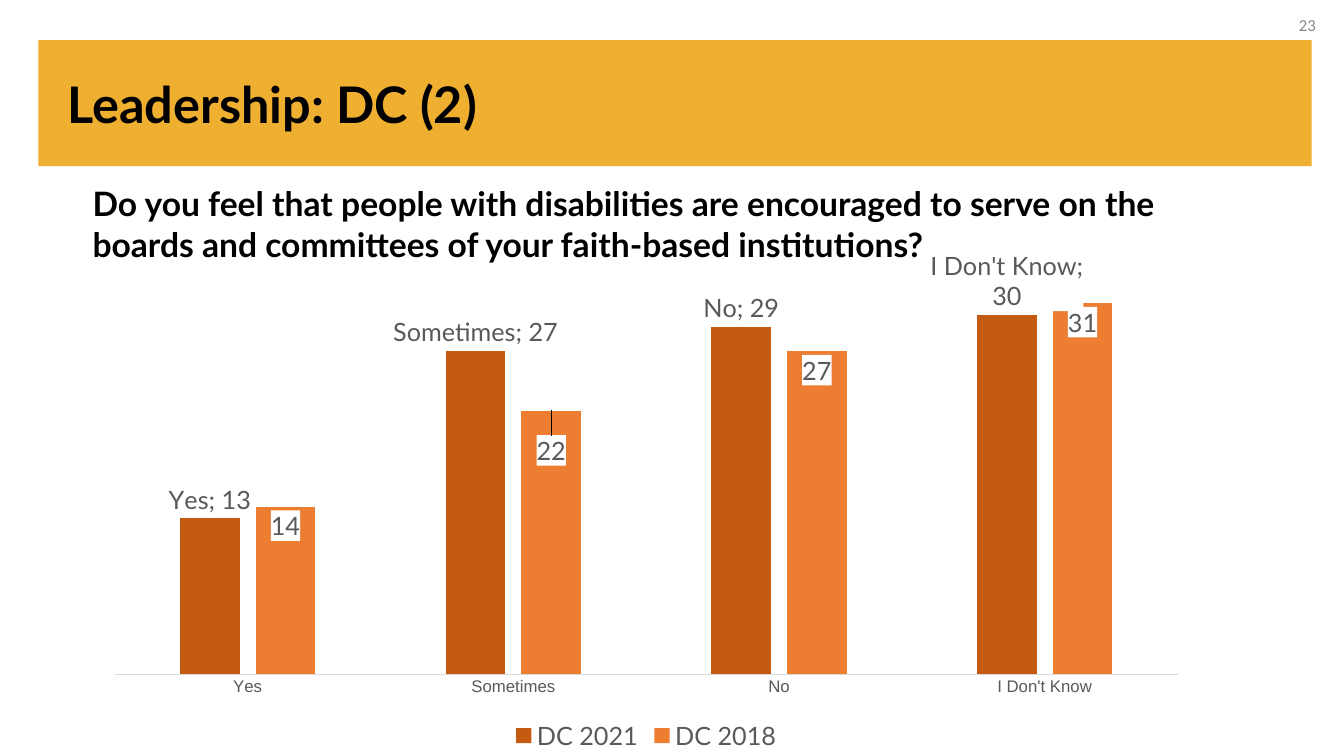
from dataclasses import dataclass

from lxml.etree import _Element
from pptx import Presentation
from pptx.chart.chart import Chart
from pptx.chart.data import CategoryChartData
from pptx.dml.color import RGBColor
from pptx.enum.chart import XL_CHART_TYPE, XL_LABEL_POSITION, XL_LEGEND_POSITION, XL_TICK_MARK
from pptx.enum.shapes import MSO_SHAPE
from pptx.enum.text import MSO_ANCHOR, PP_ALIGN
from pptx.oxml import parse_xml
from pptx.oxml.ns import nsdecls, qn
from pptx.slide import Slide
from pptx.text.text import Font
from pptx.util import Inches, Pt

SLIDE_WIDTH = Inches(13.33)
SLIDE_HEIGHT = Inches(7.5)

GOLD = RGBColor(0xEF, 0xAF, 0x30)
BLACK = RGBColor(0x00, 0x00, 0x00)
PAGE_GRAY = RGBColor(0x88, 0x88, 0x88)
LABEL_GRAY = RGBColor(0x59, 0x59, 0x59)
AXIS_GRAY = RGBColor(0xD9, 0xD9, 0xD9)
DARK_ORANGE = RGBColor(0xC5, 0x5A, 0x11)
ORANGE = RGBColor(0xED, 0x7D, 0x31)

WHITE_FILL = '<a:solidFill><a:srgbClr val="FFFFFF"/></a:solidFill>'
NO_FILL = "<a:noFill/>"


@dataclass(frozen=True)
class Area:
    """Edges and extents as percentages of the slide."""

    left: float
    top: float
    width: float
    height: float

    def lengths(self) -> tuple[int, int, int, int]:
        return (
            int(SLIDE_WIDTH * self.left / 100),
            int(SLIDE_HEIGHT * self.top / 100),
            int(SLIDE_WIDTH * self.width / 100),
            int(SLIDE_HEIGHT * self.height / 100),
        )


@dataclass(frozen=True)
class Caption:
    text: str
    area: Area
    size: int
    font_name: str = "Lato"
    color: RGBColor = BLACK
    bold: bool = True
    anchor: MSO_ANCHOR = MSO_ANCHOR.MIDDLE
    alignment: PP_ALIGN = PP_ALIGN.LEFT


@dataclass(frozen=True)
class Survey:
    name: str
    percentages: tuple[int, ...]
    color: RGBColor
    label_position: XL_LABEL_POSITION
    names_category: bool


BANNER = Area(2.85, 5.33, 94.75, 16.67)
CHART_AREA = Area(6.9, 32.4, 82.37, 67.6)
CAPTIONS = (
    Caption("Leadership: DC (2)", Area(4.28, 5.33, 91.22, 16.67), 36),
    Caption("23", Area(76.14, 0.67, 22.51, 5.33), 12, "Calibri", PAGE_GRAY, False,
            alignment=PP_ALIGN.RIGHT),
    Caption("Do you feel that people with disabilities are encouraged to serve on the "
            "boards and committees of your faith-based institutions?",
            Area(6.15, 23.6, 81.32, 12.13), 24, anchor=MSO_ANCHOR.TOP),
)
ANSWERS = ("Yes", "Sometimes", "No", "I Don't Know")
SURVEYS = (
    Survey("DC 2021", (13, 27, 29, 30), DARK_ORANGE, XL_LABEL_POSITION.OUTSIDE_END, True),
    Survey("DC 2018", (14, 22, 27, 31), ORANGE, XL_LABEL_POSITION.INSIDE_END, False),
)


def style_font(font: Font, size: int, name: str, color: RGBColor, bold: bool = False) -> None:
    font.size = Pt(size)
    font.name = name
    font.bold = bold
    font.color.rgb = color


def add_banner(slide: Slide) -> None:
    shape = slide.shapes.add_shape(MSO_SHAPE.RECTANGLE, *BANNER.lengths())
    shape.shadow.inherit = False
    shape.fill.solid()
    shape.fill.fore_color.rgb = GOLD
    shape.line.fill.background()


def add_caption(slide: Slide, caption: Caption) -> None:
    text_frame = slide.shapes.add_textbox(*caption.area.lengths()).text_frame
    text_frame.word_wrap = True
    text_frame.vertical_anchor = caption.anchor
    text_frame.text = caption.text
    paragraph = text_frame.paragraphs[0]
    paragraph.alignment = caption.alignment
    style_font(paragraph.runs[0].font, caption.size, caption.font_name, caption.color, caption.bold)


def fill_properties(fill: str) -> _Element:
    return parse_xml(f'<c:spPr {nsdecls("c", "a")}>{fill}<a:ln><a:noFill/></a:ln></c:spPr>')


def manual_layout(content: str) -> _Element:
    return parse_xml(
        f'<c:layout {nsdecls("c")}><c:manualLayout>{content}</c:manualLayout></c:layout>'
    )


def style_series(chart: Chart, index: int, survey: Survey) -> None:
    series = chart.plots[0].series[index]
    series.format.fill.solid()
    series.format.fill.fore_color.rgb = survey.color
    labels = series.data_labels
    labels.show_value = True
    labels.show_category_name = survey.names_category
    labels.position = survey.label_position
    style_font(labels.font, 18, "Lato", LABEL_GRAY)
    element = labels._element
    element.find(qn("c:txPr")).addprevious(fill_properties(WHITE_FILL))
    separator = parse_xml(f'<c:separator {nsdecls("c")}>; </c:separator>')
    element.find(qn("c:showBubbleSize")).addnext(separator)


def lower_label(chart: Chart, series_index: int, point_index: int, share: float) -> None:
    series = chart.plots[0].series[series_index]
    label = series.points[point_index].data_label
    style_font(label.font, 18, "Lato", LABEL_GRAY)
    label.position = SURVEYS[series_index].label_position
    element = series.data_labels._element.find(qn("c:dLbl"))
    for old_properties in element.findall(qn("c:spPr")):
        element.remove(old_properties)
    element.find(qn("c:txPr")).addprevious(fill_properties(WHITE_FILL))
    layout = manual_layout(f'<c:x val="0"/><c:y val="{share}"/>')
    element.find(qn("c:idx")).addnext(layout)


def place_plot(chart: Chart, left: float, top: float, width: float, height: float) -> None:
    plot_area = chart._chartSpace.chart.plotArea
    for old_layout in plot_area.findall(qn("c:layout")):
        plot_area.remove(old_layout)
    plot_area.insert(0, manual_layout(
        '<c:layoutTarget val="inner"/><c:xMode val="edge"/><c:yMode val="edge"/>'
        f'<c:x val="{left}"/><c:y val="{top}"/><c:w val="{width}"/><c:h val="{height}"/>'
    ))


def add_survey_chart(slide: Slide) -> None:
    chart_data = CategoryChartData()
    chart_data.categories = ANSWERS
    for survey in SURVEYS:
        chart_data.add_series(survey.name, survey.percentages)
    chart = slide.shapes.add_chart(
        XL_CHART_TYPE.COLUMN_CLUSTERED, *CHART_AREA.lengths(), chart_data
    ).chart
    style_font(chart.font, 10, "Arial", BLACK)
    chart._chartSpace.find(qn("c:txPr")).addprevious(fill_properties(NO_FILL))
    chart.has_title = False
    chart.has_legend = True
    chart.legend.position = XL_LEGEND_POSITION.BOTTOM
    chart.legend.include_in_layout = False
    style_font(chart.legend.font, 18, "Lato", LABEL_GRAY)

    plot = chart.plots[0]
    plot.gap_width = 219
    plot.overlap = -27
    plot.vary_by_categories = False
    for index, survey in enumerate(SURVEYS):
        style_series(chart, index, survey)
    lower_label(chart, 1, 1, 0.04)

    chart.value_axis.minimum_scale = 0
    chart.value_axis.maximum_scale = 35
    chart.value_axis.has_major_gridlines = False
    chart.value_axis.visible = False
    category_axis = chart.category_axis
    category_axis.major_tick_mark = XL_TICK_MARK.NONE
    category_axis.format.line.color.rgb = AXIS_GRAY
    category_axis.format.line.width = Pt(0.75)
    style_font(category_axis.tick_labels.font, 12, "Arial", LABEL_GRAY)
    place_plot(chart, 0.02, 0.02, 0.96, 0.82)


def main() -> None:
    presentation = Presentation()
    presentation.slide_width = SLIDE_WIDTH
    presentation.slide_height = SLIDE_HEIGHT
    slide = presentation.slides.add_slide(presentation.slide_layouts[6])
    add_banner(slide)
    for caption in CAPTIONS:
        add_caption(slide, caption)
    add_survey_chart(slide)
    presentation.save("out.pptx")


if __name__ == "__main__":
    main()
